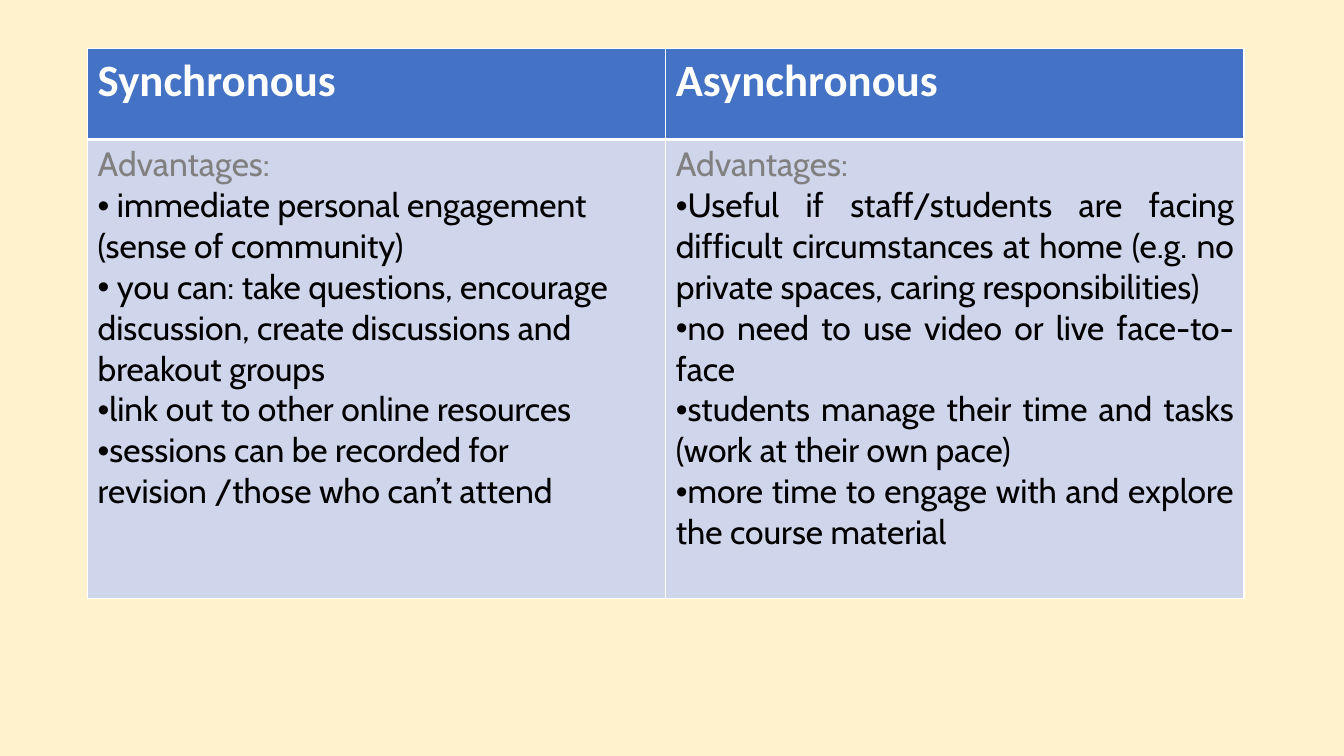
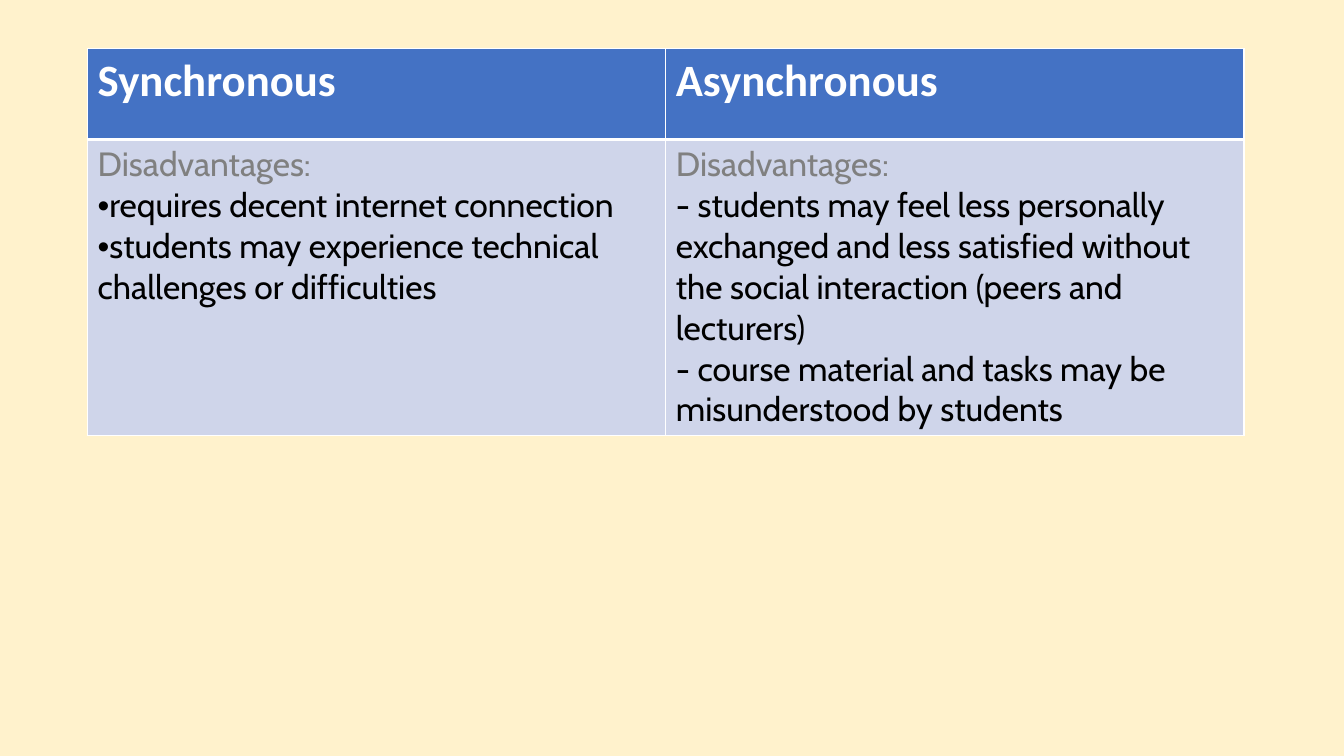
import pptx
import pptx.util
import pptx.dml.color
import pptx.enum.text
import pptx.oxml
import pptx.oxml.ns

Pt = pptx.util.Pt
RGBColor = pptx.dml.color.RGBColor
ALIGN = pptx.enum.text.PP_ALIGN

CREAM = RGBColor(0xFF, 0xF2, 0xCC)
BLUE = RGBColor(0x44, 0x72, 0xC4)
PALE_BLUE = RGBColor(0xCF, 0xD5, 0xEA)
WHITE = RGBColor(0xFF, 0xFF, 0xFF)
GREY = RGBColor(0x80, 0x80, 0x80)
BLACK = RGBColor(0, 0, 0)

HEADINGS = ["Synchronous", "Asynchronous"]
PAGES = [
    {
        "label": "Advantages:",
        "body_height": 328,
        "columns": [
            {"bullet": "•", "align": ALIGN.LEFT, "points": [
                " immediate personal engagement (sense of community)",
                " you can: take questions, encourage discussion, create discussions and breakout groups",
                "link out to other online resources",
                "sessions can be recorded for revision /those who can’t attend",
            ]},
            {"bullet": "•", "align": ALIGN.JUSTIFY, "points": [
                "Useful if staff/students are facing difficult circumstances at home "
                "(e.g. no private spaces, caring responsibilities)",
                "no need to use video or live face-to-face",
                "students manage their time and tasks (work at their own pace)",
                "more time to engage with and explore the course material",
            ]},
        ],
    },
    {
        "label": "Disadvantages:",
        "body_height": 211,
        "columns": [
            {"bullet": "•", "align": ALIGN.LEFT, "points": [
                "requires decent internet connection",
                "students may experience technical challenges or difficulties",
            ]},
            {"bullet": None, "align": ALIGN.LEFT, "points": [
                "- students may feel less personally exchanged and less satisfied "
                "without the social interaction (peers and lecturers)",
                "- course material and tasks may be misunderstood by students",
            ]},
        ],
    },
]

TABLE_LEFT, TABLE_TOP = 62.6, 34.6
COLUMN_WIDTH, HEADER_HEIGHT = 413, 65

HEADING_FONT = {"name": "Calibri", "size": Pt(32), "bold": True}
BODY_FONT = {"name": "Cabin", "size": Pt(24), "bold": False}
HEADER_BORDERS = {"lnL": 1, "lnR": 1, "lnT": 1, "lnB": 3}
BODY_BORDERS = {"lnL": 1, "lnR": 1, "lnT": 3, "lnB": 1}


def style_cell(cell, color, borders):
    cell.fill.solid()
    cell.fill.fore_color.rgb = color
    properties = cell._tc.get_or_add_tcPr()
    for index, (side, width) in enumerate(borders.items()):
        properties.insert(index, pptx.oxml.parse_xml(
            f'<a:{side} {pptx.oxml.ns.nsdecls("a")} w="{Pt(width)}">'
            f'<a:solidFill><a:srgbClr val="{WHITE}"/></a:solidFill></a:{side}>'))


def write(para, text, font, color, align=ALIGN.LEFT, bullet=None):
    para.alignment = align
    span = para.add_run()
    span.text = text
    for name, value in font.items():
        setattr(span.font, name, value)
    span.font.color.rgb = color
    if bullet:
        properties = para._p.get_or_add_pPr()
        properties.set("marL", "0")
        properties.set("indent", "0")
        for tag, attribute, value in (("buFont", "typeface", "Arial"), ("buChar", "char", bullet)):
            properties.append(pptx.oxml.parse_xml(
                f'<a:{tag} {pptx.oxml.ns.nsdecls("a")} {attribute}="{value}"/>'))


def add_comparison(deck, content):
    page = deck.slides.add_slide(deck.slide_layouts[6])
    page.background.fill.solid()
    page.background.fill.fore_color.rgb = CREAM
    heights = [HEADER_HEIGHT, content["body_height"]]
    table = page.shapes.add_table(
        len(heights), len(HEADINGS), Pt(TABLE_LEFT), Pt(TABLE_TOP),
        Pt(COLUMN_WIDTH * len(HEADINGS)), Pt(sum(heights))).table
    for row, height in zip(table.rows, heights):
        row.height = Pt(height)
    for index, (heading, column) in enumerate(zip(HEADINGS, content["columns"])):
        table.columns[index].width = Pt(COLUMN_WIDTH)
        header, body = table.cell(0, index), table.cell(1, index)
        style_cell(header, BLUE, HEADER_BORDERS)
        style_cell(body, PALE_BLUE, BODY_BORDERS)
        write(header.text_frame.paragraphs[0], heading, HEADING_FONT, WHITE)
        write(body.text_frame.paragraphs[0], content["label"], BODY_FONT, GREY)
        for point in column["points"]:
            write(body.text_frame.add_paragraph(), point, BODY_FONT, BLACK,
                  column["align"], column["bullet"])


def main():
    deck = pptx.Presentation()
    deck.slide_width, deck.slide_height = Pt(960), Pt(540)
    for content in PAGES:
        add_comparison(deck, content)
    deck.save("out.pptx")


if __name__ == "__main__":
    main()
